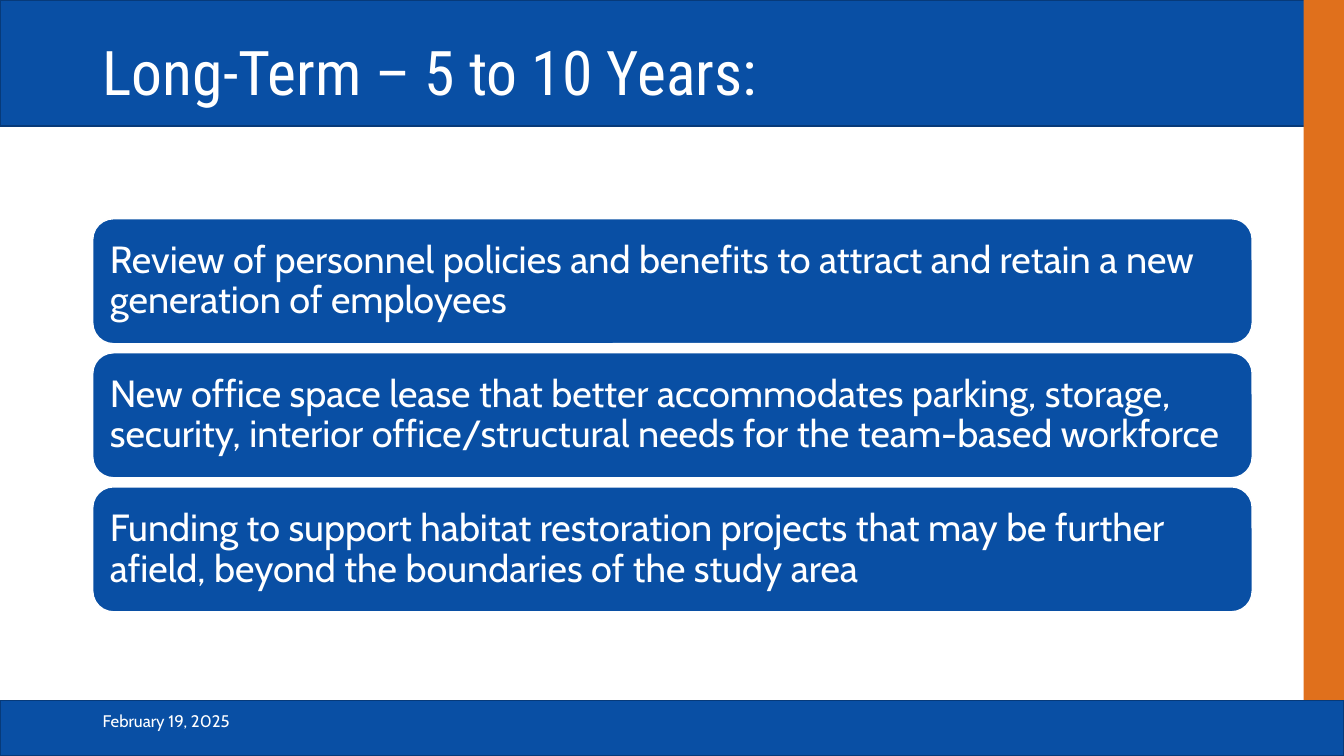
import pptx
import pptx.dml.color
import pptx.enum.shapes
import pptx.enum.text
import pptx.util

Inches = pptx.util.Inches
RGBColor = pptx.dml.color.RGBColor
SHAPE = pptx.enum.shapes.MSO_SHAPE

BLUE = RGBColor(0x09, 0x4F, 0xA4)
DARK_BLUE = RGBColor(0x07, 0x3A, 0x79)
ORANGE = RGBColor(0xE0, 0x70, 0x1C)
WHITE = RGBColor(0xFF, 0xFF, 0xFF)

LEFT_MARGIN = 0.92
CONTENT_WIDTH = 11.5
GOALS_TOP = 2.17
GOAL_HEIGHT = 1.24
GOAL_PITCH = 1.33

GOALS = [
    "Review of personnel policies and benefits to attract and retain a new "
    "generation of employees",
    "New office space lease that better accommodates parking, storage, security, "
    "interior office/structural needs for the team-based workforce",
    "Funding to support habitat restoration projects that may be further afield, "
    "beyond the boundaries of the study area",
]


def add_panel(slide, kind, left, top, width, height, fill, outline=None):
    panel = slide.shapes.add_shape(
        kind, Inches(left), Inches(top), Inches(width), Inches(height))
    panel.shadow.inherit = False
    panel.fill.solid()
    panel.fill.fore_color.rgb = fill
    if outline is None:
        panel.line.fill.background()
    else:
        panel.line.color.rgb = outline
        panel.line.width = pptx.util.Pt(1)
    return panel


def write_text(frame, text, font_name, size, line_spacing=1.0):
    """Fill a text frame with one white, left-aligned, vertically centred paragraph."""
    frame.word_wrap = True
    frame.vertical_anchor = pptx.enum.text.MSO_ANCHOR.MIDDLE
    paragraph = frame.paragraphs[0]
    paragraph.text = text
    paragraph.alignment = pptx.enum.text.PP_ALIGN.LEFT
    paragraph.line_spacing = line_spacing
    paragraph.font.name = font_name
    paragraph.font.size = pptx.util.Pt(size)
    paragraph.font.color.rgb = WHITE


def add_label(slide, top, width, height, *text_style):
    label = slide.shapes.add_textbox(
        Inches(LEFT_MARGIN), Inches(top), Inches(width), Inches(height))
    write_text(label.text_frame, *text_style)


def add_goal(slide, top, text):
    goal = add_panel(slide, SHAPE.ROUNDED_RECTANGLE, LEFT_MARGIN, top,
                     CONTENT_WIDTH, GOAL_HEIGHT, BLUE, WHITE)
    frame = goal.text_frame
    frame.margin_left = frame.margin_right = Inches(0.11)
    frame.margin_top = frame.margin_bottom = Inches(0.11)
    write_text(frame, text, "Cabin", 27, 0.9)


def main():
    presentation = pptx.Presentation()
    presentation.slide_width = Inches(13.33)
    presentation.slide_height = Inches(7.5)
    slide = presentation.slides.add_slide(presentation.slide_layouts[6])

    add_panel(slide, SHAPE.RECTANGLE, 0, 0, 13.33, 1.25, BLUE, DARK_BLUE)
    add_panel(slide, SHAPE.RECTANGLE, 12.93, -0.01, 0.42, 7.37, ORANGE)
    add_panel(slide, SHAPE.RECTANGLE, 0, 6.95, 13.33, 0.55, BLUE, DARK_BLUE)

    add_label(slide, 0.24, CONTENT_WIDTH, 1.01,
              "Long-Term – 5 to 10 Years:", "Roboto Condensed", 44, 0.9)
    add_label(slide, 6.95, 3, 0.4, "February 19, 2025", "Cabin", 12)

    for index, text in enumerate(GOALS):
        add_goal(slide, GOALS_TOP + index * GOAL_PITCH, text)

    presentation.save("out.pptx")


if __name__ == "__main__":
    main()
